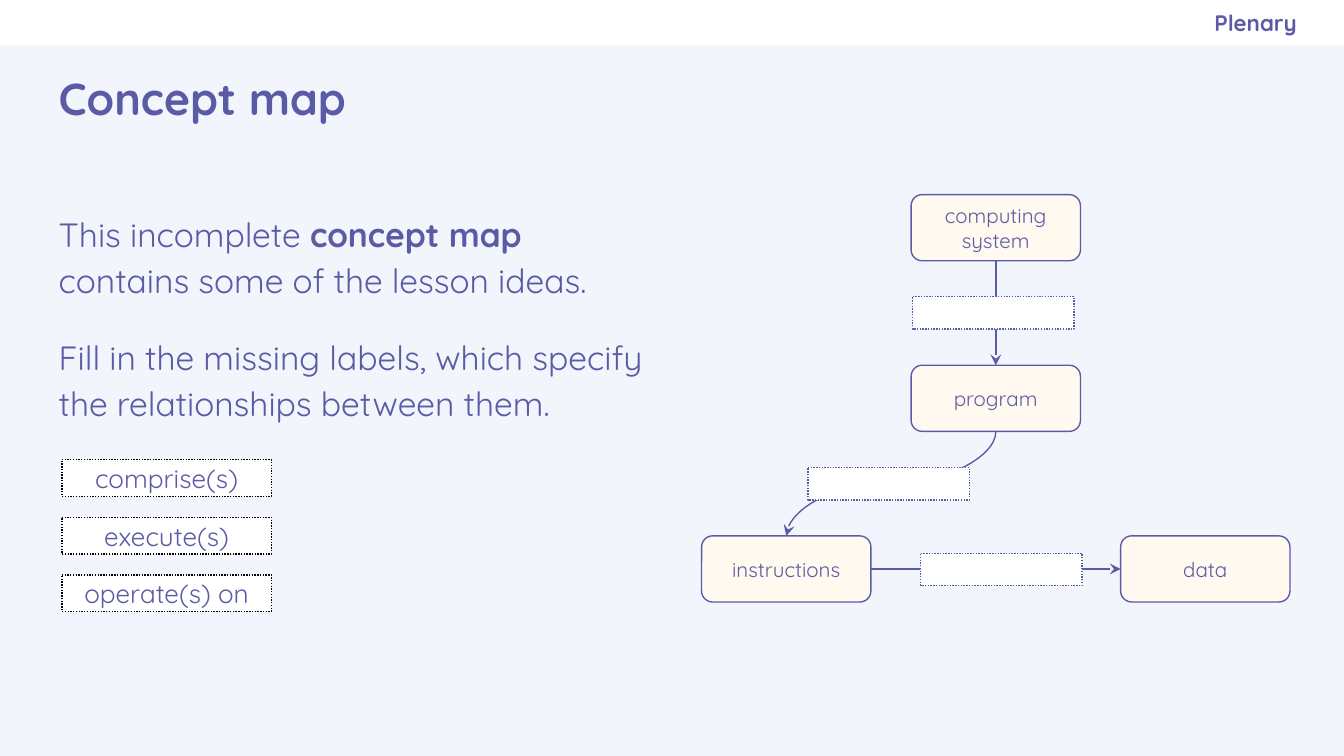
from lxml import etree
from pptx import Presentation
from pptx.dml.color import RGBColor
from pptx.enum.dml import MSO_LINE
from pptx.enum.shapes import MSO_CONNECTOR, MSO_SHAPE
from pptx.enum.text import MSO_ANCHOR, PP_ALIGN
from pptx.oxml.ns import qn
from pptx.util import Cm, Pt

RECTANGLE = MSO_SHAPE.RECTANGLE
ROUNDED = MSO_SHAPE.ROUNDED_RECTANGLE
CURVE = MSO_CONNECTOR.CURVE
DOTTED = MSO_LINE.ROUND_DOT
TOP, MIDDLE = MSO_ANCHOR.TOP, MSO_ANCHOR.MIDDLE
LEFT, CENTER, RIGHT = PP_ALIGN.LEFT, PP_ALIGN.CENTER, PP_ALIGN.RIGHT
TOP_SITE, LEFT_SITE, BOTTOM_SITE, RIGHT_SITE = range(4)

FONT = "Quicksand"
INSET = 0.25
COLORS = {
    "page": "F2F6FC",
    "purple": "5B5BA5",
    "cream": "FFF9EF",
    "white": "FFFFFF",
    "black": "000000",
}


def color(name):
    return RGBColor.from_string(COLORS[name])


def write(shape, paragraphs, size, bold=False, align=LEFT, anchor=MIDDLE,
          right_inset=INSET, line_spacing=None, gap=0):
    frame = shape.text_frame
    frame.word_wrap = True
    frame.vertical_anchor = anchor
    frame.margin_left = frame.margin_top = frame.margin_bottom = Cm(INSET)
    frame.margin_right = Cm(right_inset)
    for index, spans in enumerate(paragraphs):
        para = frame.add_paragraph() if index else frame.paragraphs[0]
        para.alignment = align
        para.line_spacing = line_spacing
        if index:
            para.space_before = Pt(gap)
        for text, strong in spans:
            span = para.add_run()
            span.text = text
            span.font.name = FONT
            span.font.size = Pt(size)
            span.font.bold = bold or strong
            span.font.color.rgb = color("purple")


def plain(text):
    return [[(text, False)]]


def add_text(page, box, paragraphs, **text_format):
    shape = page.shapes.add_textbox(*map(Cm, box))
    write(shape, paragraphs, **text_format)


def add_box(page, box, fill, kind=ROUNDED, corner=0, line=None, dash=None):
    shape = page.shapes.add_shape(kind, *map(Cm, box))
    shape.shadow.inherit = False
    shape.fill.solid()
    shape.fill.fore_color.rgb = color(fill)
    if kind == ROUNDED:
        shape.adjustments[0] = corner
    if line:
        shape.line.color.rgb = color(line)
        shape.line.width = Pt(0.75)
        shape.line.dash_style = dash
    else:
        shape.line.fill.background()
    return shape


def add_arrow(page, start, start_site, end, end_site):
    arrow = page.shapes.add_connector(CURVE, 0, 0, 0, 0)
    arrow.begin_connect(start, start_site)
    arrow.end_connect(end, end_site)
    if start_site == BOTTOM_SITE:
        turn_down(arrow)
    arrow.line.color.rgb = color("purple")
    arrow.line.width = Pt(0.75)
    head = etree.SubElement(arrow.line._get_or_add_ln(), qn("a:tailEnd"))
    head.set("type", "stealth")
    etree.SubElement(arrow._element.spPr, qn("a:effectLst"))


def turn_down(arrow):
    center_x = (arrow.begin_x + arrow.end_x) // 2
    center_y = (arrow.begin_y + arrow.end_y) // 2
    length, spread = arrow.height, arrow.width
    frame = arrow._element.spPr.get_or_add_xfrm()
    frame.flipH = frame.flipV = False
    frame.set("rot", "5400000")
    arrow.left, arrow.top = center_x - length // 2, center_y - spread // 2
    arrow.width, arrow.height = length, spread


def add_header(page, box):
    left, top, width, height = box
    add_box(page, box, "white", kind=RECTANGLE)
    text_width, margin = 9.9, 0.89
    add_text(page, (left + width - margin - text_width, top, text_width, height),
             plain("Plenary"), size=12, bold=True, align=RIGHT, right_inset=0)


def add_title(page, box):
    add_text(page, box, plain("Concept map"), size=24, bold=True)


def add_instructions(page, box):
    paragraphs = [
        [("This incomplete ", False), ("concept map", True),
         (" contains some of the lesson ideas.", False)],
        [("Fill in the missing labels, which specify "
          "the relationships between them.", False)],
    ]
    add_text(page, box, paragraphs, size=18, anchor=TOP, line_spacing=1.15, gap=16)


def add_choices(page, box):
    left, top, width, height = box
    choices = ["comprise(s)", "execute(s)", "operate(s) on"]
    choice_height = 0.69
    step = (height - choice_height) / (len(choices) - 1)
    for index, choice in enumerate(choices):
        shape = add_box(page, (left, top + index * step, width, choice_height),
                        "white", line="black", dash=DOTTED)
        write(shape, plain(choice), size=14, align=CENTER)


def add_concept_map(page, box):
    left, top, width, height = box
    node_width, node_height = 3.2, 1.25
    column_step = (width - node_width) / 2
    row_step = (height - node_height) / 2
    places = {
        "computing system": (1, 0),
        "program": (1, 1),
        "instructions": (0, 2),
        "data": (2, 2),
    }
    nodes = {}
    for name, (column, row) in places.items():
        node_box = (left + column * column_step, top + row * row_step,
                    node_width, node_height)
        nodes[name] = add_box(page, node_box, "cream", corner=0.167, line="purple")
        write(nodes[name], plain(name), size=11, align=CENTER)

    links = [
        ("computing system", BOTTOM_SITE, "program", TOP_SITE),
        ("program", BOTTOM_SITE, "instructions", TOP_SITE),
        ("instructions", RIGHT_SITE, "data", LEFT_SITE),
    ]
    for start, start_site, end, end_site in links:
        add_arrow(page, nodes[start], start_site, nodes[end], end_site)

    for label_x, label_y in [(3.99, 1.93), (2.01, 5.16), (4.14, 6.78)]:
        add_box(page, (left + label_x, top + label_y, 3.05, 0.61),
                "white", line="purple", dash=DOTTED)


def main():
    deck = Presentation()
    deck.slide_width, deck.slide_height = Cm(25.4), Cm(14.29)
    page = deck.slides.add_slide(deck.slide_layouts[6])
    page.background.fill.solid()
    page.background.fill.fore_color.rgb = color("page")
    add_header(page, (0, 0, 25.4, 0.86))
    add_title(page, (0.86, 0.86, 23.67, 1.96))
    add_instructions(page, (0.86, 3.68, 11.66, 4.5))
    add_choices(page, (1.17, 8.69, 3.96, 2.87))
    add_concept_map(page, (13.26, 3.68, 11.12, 7.7))
    deck.save("out.pptx")


if __name__ == "__main__":
    main()
